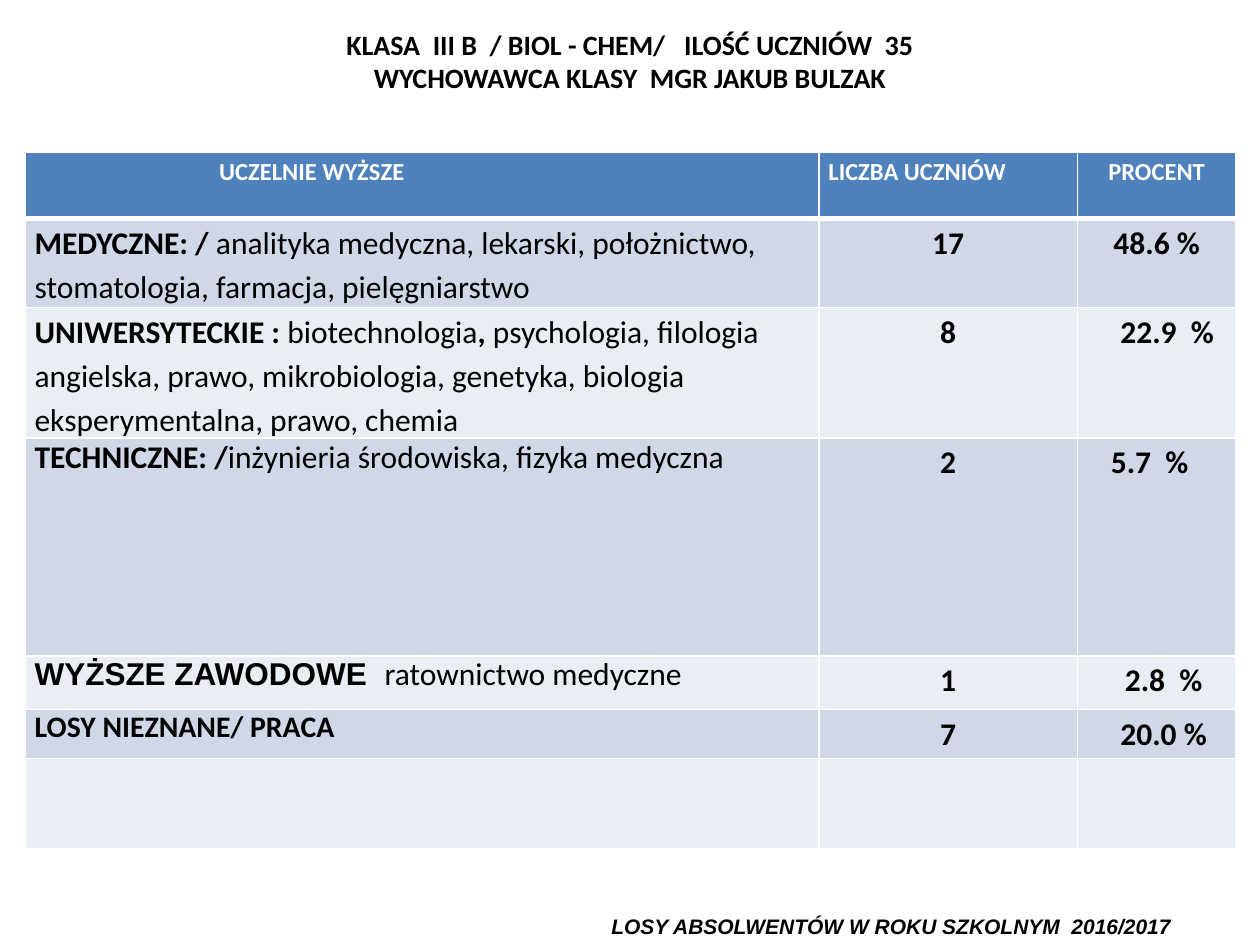
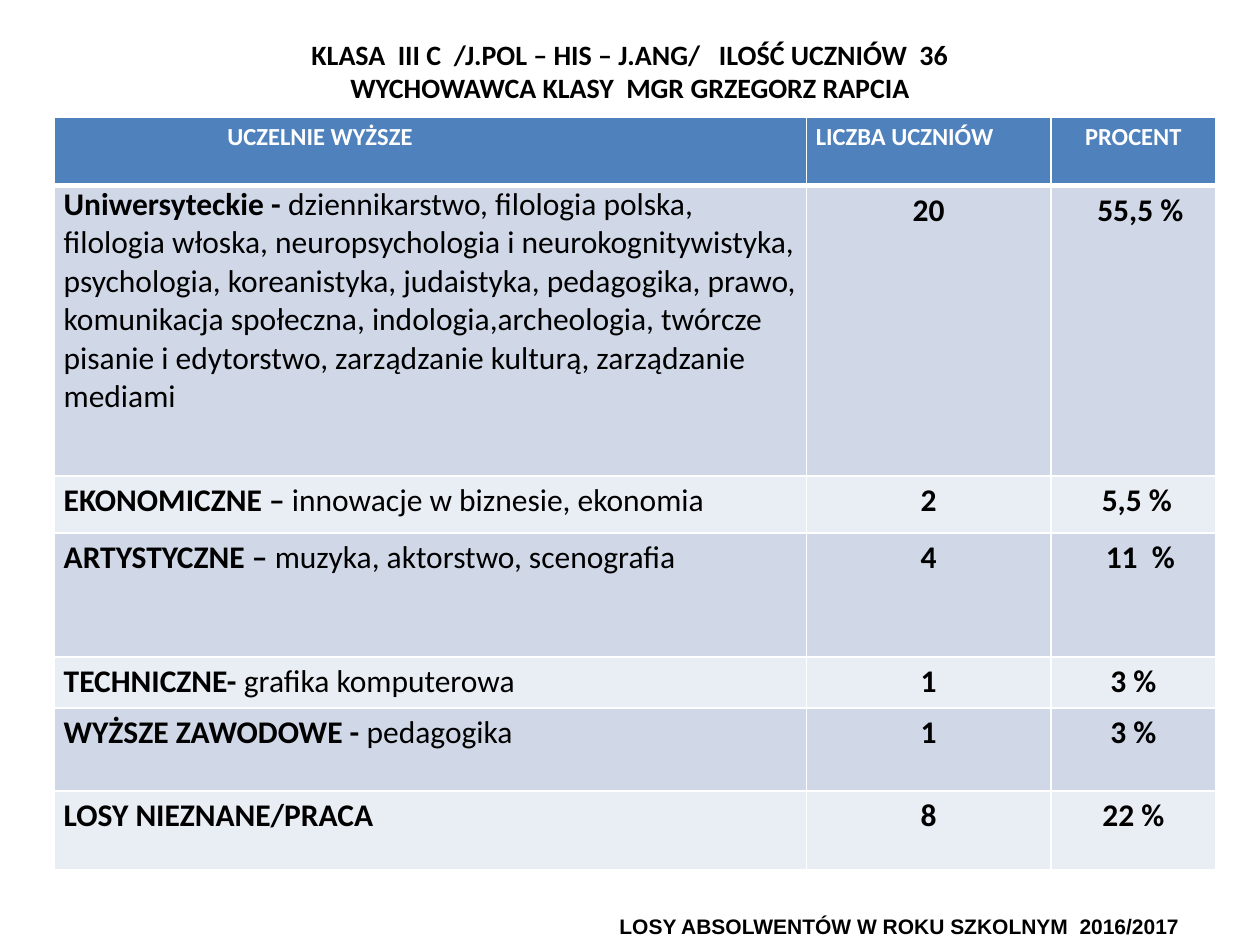
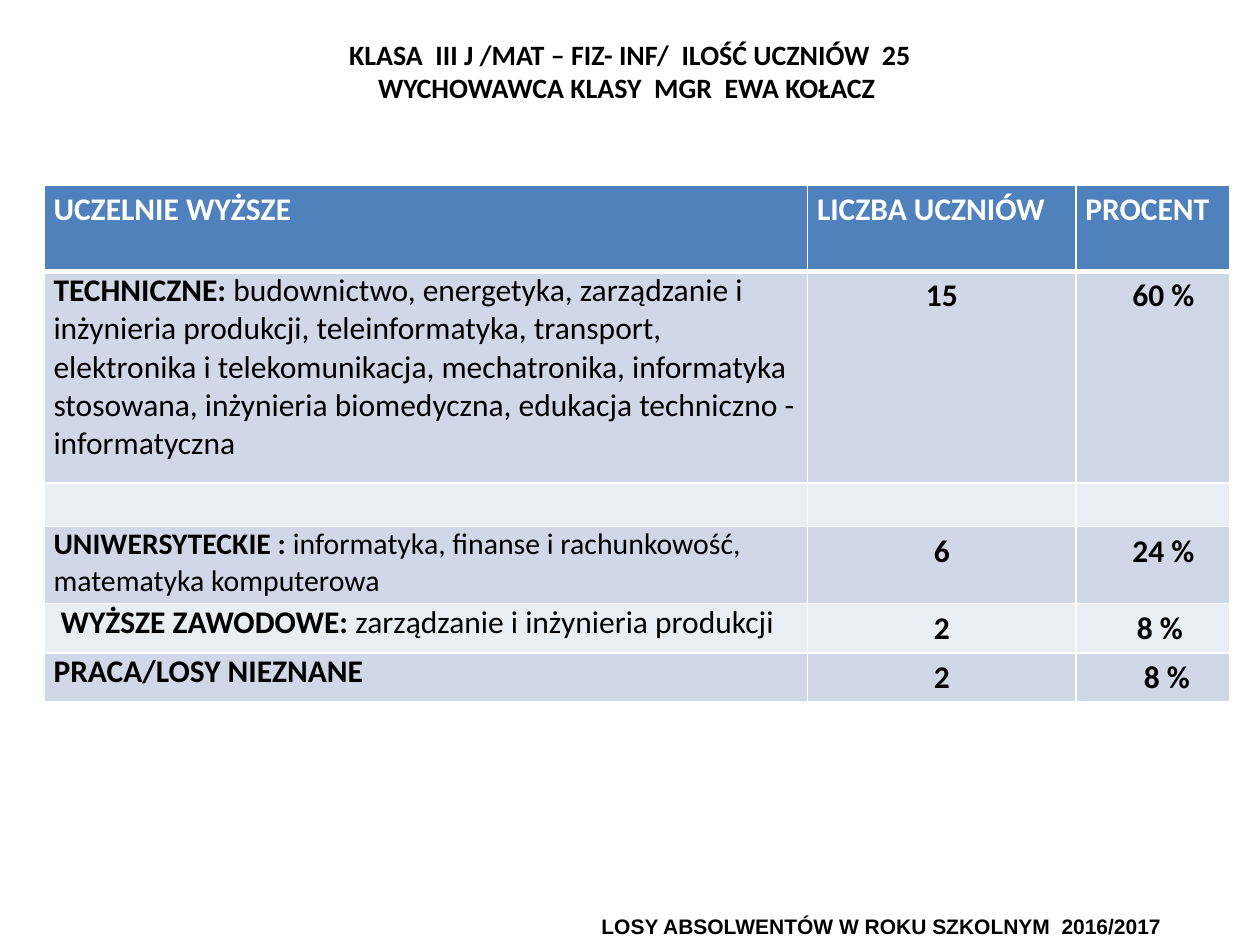
"""Build three class tables showing where school graduates went on to study."""
import dataclasses

import pptx
import pptx.chart.data
import pptx.dml.color
import pptx.enum.text
import pptx.oxml.ns
import pptx.util
from lxml import etree

Pt = pptx.util.Pt
ALIGN = pptx.enum.text.PP_ALIGN
ANCHOR = pptx.enum.text.MSO_ANCHOR

COLORS = {
    "text": "000000",
    "white": "FFFFFF",
    "header": "4F81BD",
    "odd": "D0D8E8",
    "even": "E9EDF4",
}
FONT, FOOTER_FONT = "Calibri", "Arial"
FOOTER = "LOSY ABSOLWENTÓW W ROKU SZKOLNYM  2016/2017"
HEADINGS = ("UCZELNIE WYŻSZE", "LICZBA UCZNIÓW", "PROCENT")
INSET = 5.4


@dataclasses.dataclass
class Row:
    """One table row; field runs alternate between bold and regular."""
    height: float
    fields: tuple = ()
    count: str = ""
    percent: str = ""
    shift: float = 0
    spacing: float = 1.0
    size: float = 18
    indent: float = 0
    lead_font: str = FONT


def rgb(name):
    """Return the named palette colour."""
    return pptx.dml.color.RGBColor.from_string(COLORS[name])


def style(p, size, color="text", align=ALIGN.CENTER, name=FONT, spacing=None):
    """Set bold paragraph text in the given look."""
    p.alignment = align
    if spacing:
        p.line_spacing = spacing
    p.font.name = name
    p.font.size = Pt(size)
    p.font.bold = True
    p.font.color.rgb = rgb(color)


def add_text(s, left, top, width, height, text, anchor):
    """Add a wrapped text box and return its text frame."""
    tf = s.shapes.add_textbox(Pt(left), Pt(top), Pt(width), Pt(height)).text_frame
    tf.word_wrap = True
    tf.vertical_anchor = anchor
    tf.text = text
    return tf


def add_title(s, top, text):
    """Add the two-line class title."""
    tf = add_text(s, 36, top, 648, 39, text, ANCHOR.MIDDLE)
    tf.margin_top = tf.margin_bottom = 0
    for p in tf.paragraphs:
        style(p, 16)


def add_footer(s, center, italic):
    """Add the footer line around a horizontal centre."""
    tf = add_text(s, center - 175, 518.4, 350, 21.6, FOOTER, ANCHOR.BOTTOM)
    p = tf.paragraphs[0]
    style(p, 12, name=FOOTER_FONT)
    p.font.italic = italic


def set_borders(cell, top, bottom):
    """Draw white borders around a cell."""
    tc_pr = cell._tc.get_or_add_tcPr()
    qn = pptx.oxml.ns.qn
    for side, width in (("L", 1), ("R", 1), ("T", top), ("B", bottom)):
        ln = etree.SubElement(tc_pr, qn("a:ln" + side), w=str(Pt(width)))
        fill = etree.SubElement(ln, qn("a:solidFill"))
        etree.SubElement(fill, qn("a:srgbClr"), val=COLORS["white"])


def format_cell(cell, color, top=1, bottom=1, shift=0):
    """Set borders, fill and insets, moving centred text sideways by shift."""
    set_borders(cell, top, bottom)
    cell.fill.solid()
    cell.fill.fore_color.rgb = rgb(color)
    cell.margin_left = Pt(INSET + max(2 * shift, 0))
    cell.margin_right = Pt(INSET + max(-2 * shift, 0))
    cell.margin_top = cell.margin_bottom = 0


def fill_header(table, size, centered):
    """Fill the heading row."""
    aligns = (ALIGN.CENTER, ALIGN.LEFT, ALIGN.CENTER) if centered else (ALIGN.LEFT,) * 3
    shifts = (-63 if centered else 0, 0, 0)
    for cell, text, align, shift in zip(table.rows[0].cells, HEADINGS, aligns, shifts):
        format_cell(cell, "header", bottom=3, shift=shift)
        p = cell.text_frame.paragraphs[0]
        p.text = text
        style(p, size, "white", align, spacing=1.15)


def fill_row(table, index, row):
    """Fill one body row."""
    color = "odd" if index % 2 else "even"
    cells = table.rows[index].cells
    for cell, shift in zip(cells, (row.indent / 2, 0, row.shift)):
        format_cell(cell, color, top=3 if index == 1 else 1, shift=shift)
    if not row.fields:
        return
    p = cells[0].text_frame.paragraphs[0]
    style(p, row.size, align=ALIGN.LEFT, spacing=row.spacing)
    for i, text in enumerate(row.fields):
        r = p.add_run()
        r.text = text
        if i % 2:
            r.font.bold = False
        elif row.lead_font != FONT:
            r.font.name = row.lead_font
    for cell, text in zip(cells[1:] if isinstance(cells, (list, tuple))
                          else (cells[1], cells[2]), (row.count, row.percent)):
        p = cell.text_frame.paragraphs[0]
        p.text = text
        style(p, 18, spacing=1.15)


def add_results(s, left, top, widths, header_height, rows, header_size=14, centered=True):
    """Add the table of fields of study."""
    heights = [header_height] + [row.height for row in rows]
    table = s.shapes.add_table(len(heights), len(widths), Pt(left), Pt(top),
                               Pt(sum(widths)), Pt(sum(heights))).table
    table.first_row = table.horz_banding = False
    for column, width in zip(table.columns, widths):
        column.width = Pt(width)
    for line, height in zip(table.rows, heights):
        line.height = Pt(height)
    fill_header(table, header_size, centered)
    for index, row in enumerate(rows, 1):
        fill_row(table, index, row)


def add_class(prs, title_top, title, footer_center, italic=False, **results):
    """Add a slide for one class."""
    s = prs.slides.add_slide(prs.slide_layouts[6])
    add_title(s, title_top, title)
    add_footer(s, footer_center, italic)
    add_results(s, **results)


def main():
    """Build and save the presentation."""
    prs = pptx.Presentation()
    prs.slide_width, prs.slide_height = Pt(720), Pt(540)

    add_class(
        prs, 15.4,
        "KLASA  III B  / BIOL - CHEM/   ILOŚĆ UCZNIÓW  35\n"
        "WYCHOWAWCA KLASY  MGR JAKUB BULZAK",
        509.4, italic=True, left=14.4, top=87.2, widths=(453.6, 147.6, 90.7),
        header_height=37.8, rows=[
            Row(50.8, ("MEDYCZNE: / ", "analityka medyczna, lekarski, położnictwo, "
                       "stomatologia, farmacja, pielęgniarstwo"),
                "17", "48.6 %", spacing=1.15),
            Row(74.3, ("UNIWERSYTECKIE : ", "biotechnologia", ", ",
                       "psychologia, filologia angielska, prawo, mikrobiologia, "
                       "genetyka, biologia eksperymentalna, prawo, chemia"),
                "8", "22.9  %", 6, spacing=1.15),
            Row(124.5, ("TECHNICZNE: /", "inżynieria środowiska, fizyka medyczna"),
                "2", "5.7  %", -4),
            Row(30.6, ("WYŻSZE ZAWODOWE  ", "ratownictwo medyczne"),
                "1", "2.8  %", 4, lead_font="Arial"),
            Row(28, ("LOSY NIEZNANE/ PRACA",), "7", "20.0 %", 4, size=17),
            Row(51.7),
        ])

    add_class(
        prs, 21.1,
        "KLASA  III C  /J.POL – HIS – J.ANG/   ILOŚĆ UCZNIÓW  36\n"
        "WYCHOWAWCA KLASY  MGR GRZEGORZ RAPCIA",
        514, left=31, top=67, widths=(429.8, 139.7, 94.3),
        header_height=38.9, rows=[
            Row(166, ("Uniwersyteckie - ",
                      "dziennikarstwo, filologia polska, filologia włoska, "
                      "neuropsychologia i neurokognitywistyka, psychologia, "
                      "koreanistyka, judaistyka, pedagogika, prawo, komunikacja "
                      "społeczna, indologia,archeologia, twórcze pisanie i "
                      "edytorstwo, zarządzanie kulturą, zarządzanie mediami"),
                "20", "55,5 %", 4),
            Row(32.6, ("EKONOMICZNE – ", "innowacje w biznesie, ekonomia"),
                "2", "5,5 %", 2, spacing=1.15),
            Row(70.9, ("ARTYSTYCZNE – ", "muzyka, aktorstwo, scenografia"),
                "4", "11  %", 4, spacing=1.15),
            Row(29.1, ("TECHNICZNE- ", "grafika komputerowa"),
                "1", "3 %", spacing=1.15),
            Row(47.4, ("WYŻSZE ZAWODOWE - ", "pedagogika"),
                "1", "3 %", spacing=1.15),
            Row(44.9, ("LOSY NIEZNANE/PRACA",), "8", "22 %", spacing=1.15),
        ])

    add_class(
        prs, 21.1,
        "KLASA  III J /MAT – FIZ- INF/  ILOŚĆ UCZNIÓW  25\n"
        "WYCHOWAWCA KLASY  MGR  EWA KOŁACZ ",
        503.7, left=25.2, top=105.6, widths=(436.3, 153.4, 87.8),
        header_height=49.4, header_size=18, centered=False, rows=[
            Row(120.9, ("TECHNICZNE: ",
                        "budownictwo, energetyka, zarządzanie i inżynieria "
                        "produkcji, teleinformatyka, transport, elektronika i "
                        "telekomunikacja, mechatronika, informatyka stosowana, "
                        "inżynieria biomedyczna, edukacja techniczno - "
                        "informatyczna"),
                "15", "60 %", 6),
            Row(24.9),
            Row(44, ("UNIWERSYTECKIE : ", "informatyka, finanse i rachunkowość, "
                     "matematyka komputerowa"),
                "6", "24 %", 6, size=17),
            Row(28.3, ("WYŻSZE ZAWODOWE: ", "zarządzanie i inżynieria produkcji"),
                "2", "8 %", 4, indent=4),
            Row(27.7, ("PRACA/LOSY NIEZNANE",), "2", "8 %", 8),
        ])

    prs.save("out.pptx")


if __name__ == "__main__":
    main()
